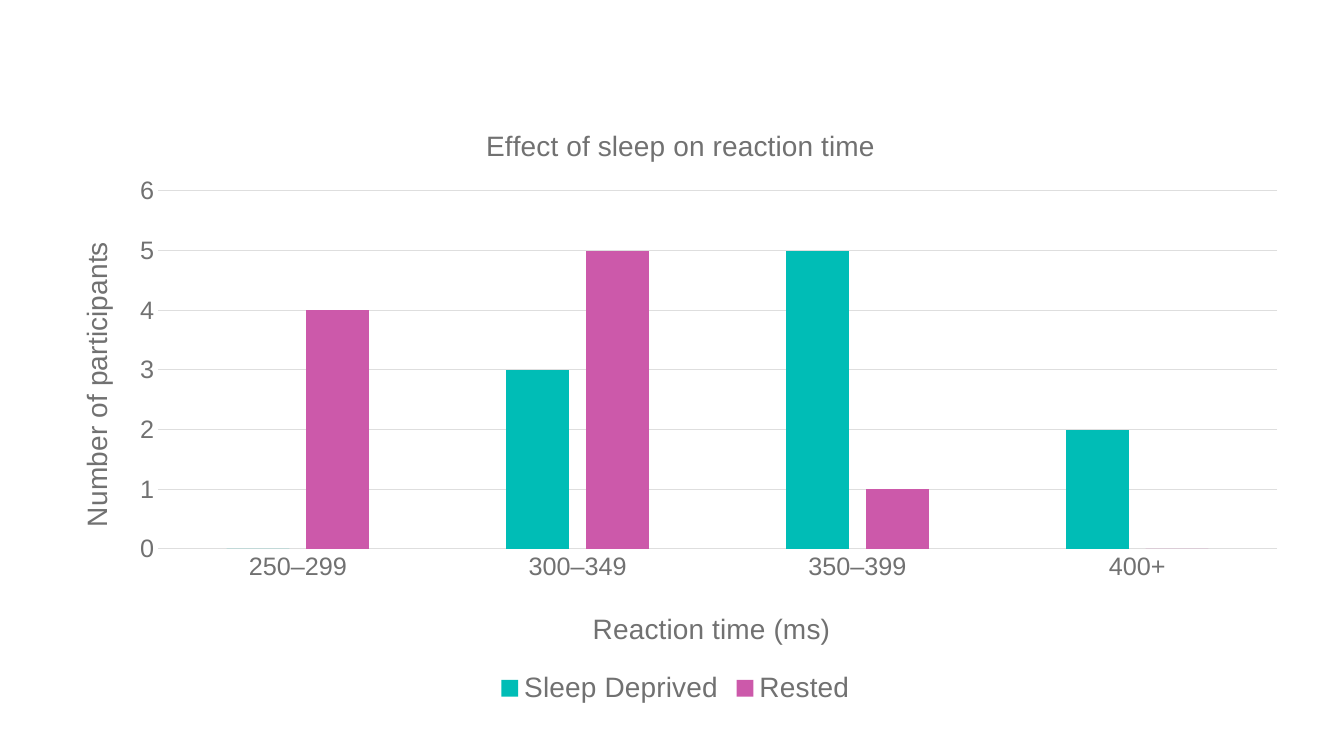
from dataclasses import dataclass
from typing import Any

import lxml.etree
import pptx
import pptx.chart.data
import pptx.dml.color
import pptx.enum.chart
import pptx.oxml
import pptx.oxml.ns
import pptx.util

Pt = pptx.util.Pt
qn = pptx.oxml.ns.qn


@dataclass(frozen=True)
class Theme:
    font: str = "Arial"
    text: str = "717171"
    grid: str = "DEDEDE"
    title_size: int = 20
    label_size: int = 18
    line_width: float = 0.75


@dataclass(frozen=True)
class Group:
    name: str
    counts: tuple[int, ...]
    color: str


THEME = Theme()
REACTION_TIMES = ("250–299", "300–349", "350–399", "400+")
GROUPS = (
    Group("Sleep Deprived", (0, 3, 5, 2), "00BDB6"),
    Group("Rested", (4, 5, 1, 0), "CC59AA"),
)


def rgb(color: str) -> pptx.dml.color.RGBColor:
    return pptx.dml.color.RGBColor.from_string(color)


def style_font(font: Any, size: int) -> None:
    font.name = THEME.font
    font.size = Pt(size)
    font.bold = False
    font.color.rgb = rgb(THEME.text)


def style_line(line: Any) -> None:
    line.color.rgb = rgb(THEME.grid)
    line.width = Pt(THEME.line_width)


def set_layout(element: Any, index: int, **values: Any) -> None:
    for old in element.findall(qn("c:layout")):
        element.remove(old)
    layout = pptx.oxml.parse_xml(f"<c:layout {pptx.oxml.ns.nsdecls('c')}/>")
    manual = lxml.etree.SubElement(layout, qn("c:manualLayout"))
    for tag, value in values.items():
        lxml.etree.SubElement(manual, qn(f"c:{tag}")).set("val", str(value))
    element.insert(index, layout)


def set_title(title: Any, text: str, x: float, y: float) -> None:
    p = title.text_frame.paragraphs[0]
    p.text = text
    style_font(p.font, THEME.title_size)
    set_layout(title._element, 1, xMode="edge", yMode="edge", x=x, y=y)


def style_axis(axis: Any, title: str, x: float, y: float) -> None:
    axis.major_tick_mark = pptx.enum.chart.XL_TICK_MARK.NONE
    axis.minor_tick_mark = pptx.enum.chart.XL_TICK_MARK.NONE
    style_font(axis.tick_labels.font, THEME.label_size)
    set_title(axis.axis_title, title, x, y)


def add_reaction_chart(slide: Any) -> None:
    data = pptx.chart.data.CategoryChartData()
    data.categories = REACTION_TIMES
    for group in GROUPS:
        data.add_series(group.name, group.counts)
    chart = slide.shapes.add_chart(
        pptx.enum.chart.XL_CHART_TYPE.COLUMN_CLUSTERED,
        Pt(34.56), Pt(70.56), Pt(895.68), Pt(436.32), data,
    ).chart
    style_font(chart.font, THEME.label_size)
    set_title(chart.chart_title, "Effect of sleep on reaction time", 0.345, 0.04)

    plot = chart.plots[0]
    plot.gap_width = 219
    plot.overlap = -27
    plot.vary_by_categories = False
    for series, group in zip(plot.series, GROUPS):
        series.format.fill.solid()
        series.format.fill.fore_color.rgb = rgb(group.color)

    style_axis(chart.category_axis, "Reaction time (ms)", 0.43, 0.83)
    style_line(chart.category_axis.format.line)
    counts = chart.value_axis
    style_axis(counts, "Number of participants", 0.02, 0.226)
    counts.minimum_scale, counts.maximum_scale, counts.major_unit = 0, 6, 1
    counts.format.line.fill.background()
    style_line(counts.major_gridlines.format.line)

    chart.has_legend = True
    chart.legend.position = pptx.enum.chart.XL_LEGEND_POSITION.BOTTOM
    chart.legend.include_in_layout = False
    style_font(chart.legend.font, THEME.title_size)
    plot_area = chart._chartSpace.find(f".//{qn('c:plotArea')}")
    set_layout(plot_area, 0, layoutTarget="inner", xMode="edge", yMode="edge",
               x=0.0874, y=0.151, w=0.8925, h=0.586)


def main() -> None:
    prs = pptx.Presentation()
    prs.slide_width, prs.slide_height = Pt(960), Pt(540)
    add_reaction_chart(prs.slides.add_slide(prs.slide_layouts[6]))
    prs.save("out.pptx")


if __name__ == "__main__":
    main()
